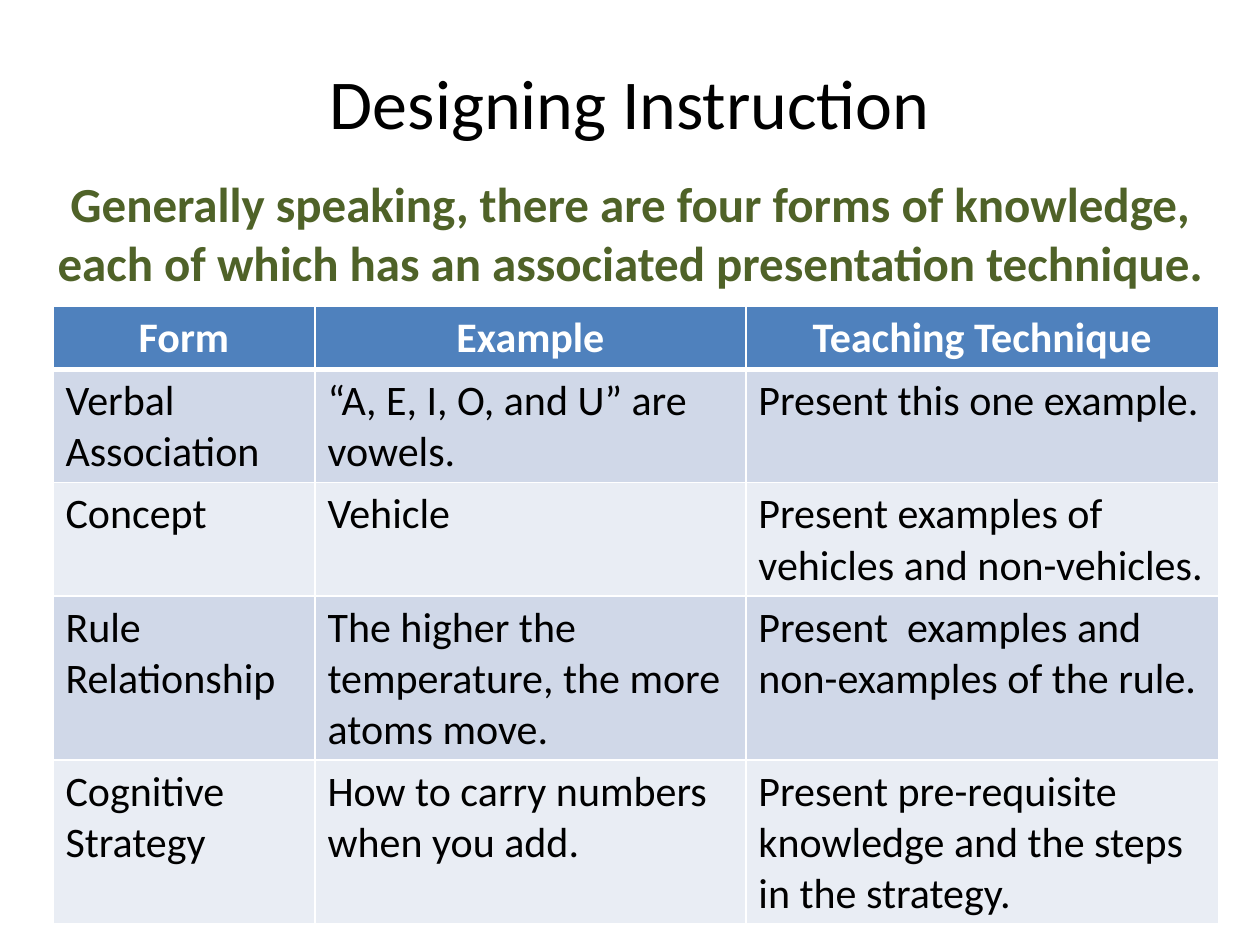
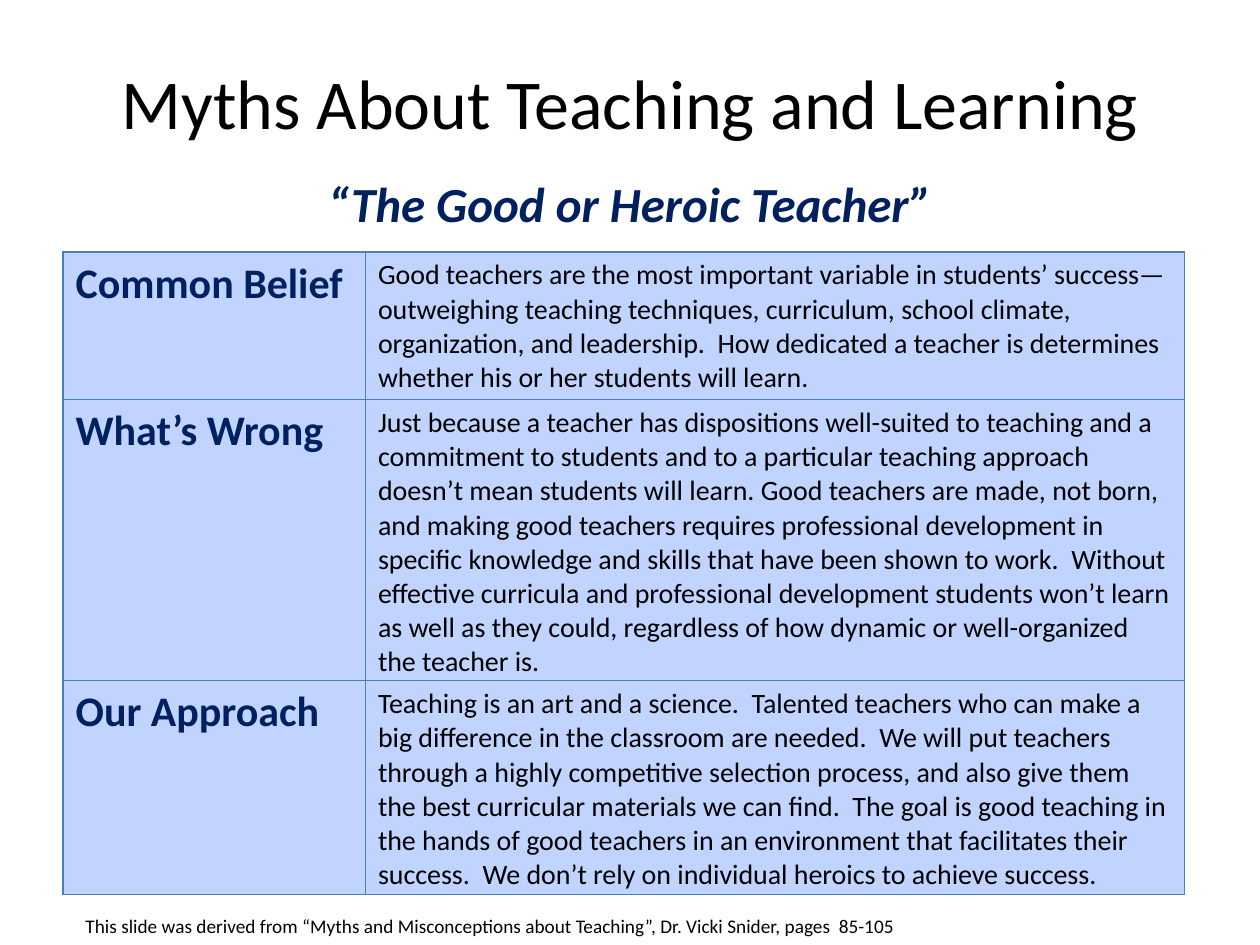
from lxml import etree
from pptx import Presentation
from pptx import util as u
from pptx.dml.color import RGBColor
from pptx.enum import text
from pptx.oxml.ns import qn

FONT = "Calibri"
BLACK, WHITE, GREEN, NAVY = "000000", "FFFFFF", "4F6228", "002060"
HEADER, BANDS = "4F81BD", ("E9EDF4", "D0D8E8")
PANEL, PANEL_LINE = "C0D4FF", "4B7EBC"
LEFT, CENTER = text.PP_ALIGN.LEFT, text.PP_ALIGN.CENTER


def rgb(value):
    return RGBColor.from_string(value)


def write(tf, content, size=24, color=BLACK, bold=False, italic=False, align=LEFT):
    tf.word_wrap = True
    p = tf.paragraphs[0]
    p.alignment = align
    r = p.add_run()
    r.text = content
    f = r.font
    f.name, f.size, f.bold, f.italic = FONT, u.Pt(size), bold, italic
    f.color.rgb = rgb(color)


def cell_borders(cell, color, **widths):
    props = cell._tc.get_or_add_tcPr()
    for side in "LRTB":
        ln = etree.SubElement(props, qn(f"a:ln{side}"), w=str(u.Pt(widths[side])))
        fill = etree.SubElement(ln, qn("a:solidFill"))
        etree.SubElement(fill, qn("a:srgbClr"), val=color)


class Deck:
    def __init__(self):
        self.prs = Presentation()
        self.prs.slide_width, self.prs.slide_height = u.Inches(10), u.Inches(7.5)
        self.s = None

    def slide(self, title):
        self.s = self.prs.slides.add_slide(self.prs.slide_layouts[5])
        sp = self.s.shapes.title
        sp.left, sp.top = u.Inches(0), u.Inches(0)
        sp.width, sp.height = u.Inches(10), u.Inches(1.61)
        sp.text_frame.vertical_anchor = text.MSO_ANCHOR.MIDDLE
        write(sp.text_frame, title, size=40, align=CENTER)

    def text(self, content, left, top, width, height, **style):
        sp = self.s.shapes.add_textbox(*map(u.Inches, (left, top, width, height)))
        sp.text_frame.auto_size = text.MSO_AUTO_SIZE.SHAPE_TO_FIT_TEXT
        write(sp.text_frame, content, **style)

    def subtitle(self, content, height, color, italic=False):
        self.text(content, 0.25, 1.33, 9.5, height, size=28, color=color,
                  bold=True, italic=italic, align=CENTER)

    def table(self, rows, left, top, col_widths, row_heights, line, weight, style, header=False):
        box = map(u.Inches, (left, top, sum(col_widths), sum(row_heights)))
        table = self.s.shapes.add_table(len(rows), len(col_widths), *box).table
        table.first_row, table.horz_banding = header, False
        for col, width in zip(table.columns, col_widths):
            col.width = u.Inches(width)
        for i, (row, height) in enumerate(zip(rows, row_heights)):
            table.rows[i].height = u.Inches(height)
            for j, content in enumerate(row):
                cell = table.cell(i, j)
                cell_borders(cell, line, L=weight, R=weight,
                             T=3 if header and i == 1 else weight,
                             B=3 if header and i == 0 else weight)
                fill, font = style(i, j)
                cell.fill.solid()
                cell.fill.fore_color.rgb = rgb(fill)
                write(cell.text_frame, content, **font)


def banded(i, j):
    if i == 0:
        return HEADER, dict(color=WHITE, bold=True, align=CENTER)
    return BANDS[i % 2], {}


def labelled(i, j):
    return PANEL, dict(color=NAVY, bold=True) if j == 0 else dict(size=16)


KNOWLEDGE_FORMS = [
    ("Form", "Example", "Teaching Technique"),
    ("Verbal Association", "“A, E, I, O, and U” are vowels.", "Present this one example."),
    ("Concept", "Vehicle", "Present examples of vehicles and non-vehicles."),
    ("Rule Relationship", "The higher the temperature, the more atoms move.",
     "Present  examples and non-examples of the rule."),
    ("Cognitive Strategy", "How to carry numbers when you add.",
     "Present pre-requisite knowledge and the steps in the strategy."),
]

HEROIC_TEACHER = [
    ("Common Belief",
     "Good teachers are the most important variable in students’ success—outweighing "
     "teaching techniques, curriculum, school climate, organization, and leadership.  "
     "How dedicated a teacher is determines whether his or her students will learn."),
    ("What’s Wrong",
     "Just because a teacher has dispositions well-suited to teaching and a commitment "
     "to students and to a particular teaching approach doesn’t mean students will learn. "
     "Good teachers are made, not born, and making good teachers requires professional "
     "development in specific knowledge and skills that have been shown to work.  Without "
     "effective curricula and professional development students won’t learn as well as "
     "they could, regardless of how dynamic or well-organized the teacher is."),
    ("Our Approach",
     "Teaching is an art and a science.  Talented teachers who can make a big difference "
     "in the classroom are needed.  We will put teachers through a highly competitive "
     "selection process, and also give them the best curricular materials we can find.  "
     "The goal is good teaching in the hands of good teachers in an environment that "
     "facilitates their success.  We don’t rely on individual heroics to achieve success."),
]


def main():
    deck = Deck()

    deck.slide("Designing Instruction")
    deck.subtitle("Generally speaking, there are four forms of knowledge, each of which "
                  "has an associated presentation technique.", 1.04, GREEN)
    deck.table(KNOWLEDGE_FORMS, 0.42, 2.43, (2.08, 3.42, 3.75), (0.5, 0.9, 0.9, 1.3, 1.3),
               WHITE, 1, banded, header=True)

    deck.slide("Myths About Teaching and Learning")
    deck.subtitle("“The Good or Heroic Teacher”", 0.57, NAVY, italic=True)
    deck.table(HEROIC_TEACHER, 0.5, 2, (2.4, 6.5), (1.17, 2.23, 1.7),
               PANEL_LINE, 0.75, labelled)
    deck.text("This slide was derived from “Myths and Misconceptions about Teaching”, "
              "Dr. Vicki Snider, pages  85-105", 0.58, 7.21, 8.83, 0.29, size=11)

    deck.prs.save("out.pptx")


if __name__ == "__main__":
    main()
